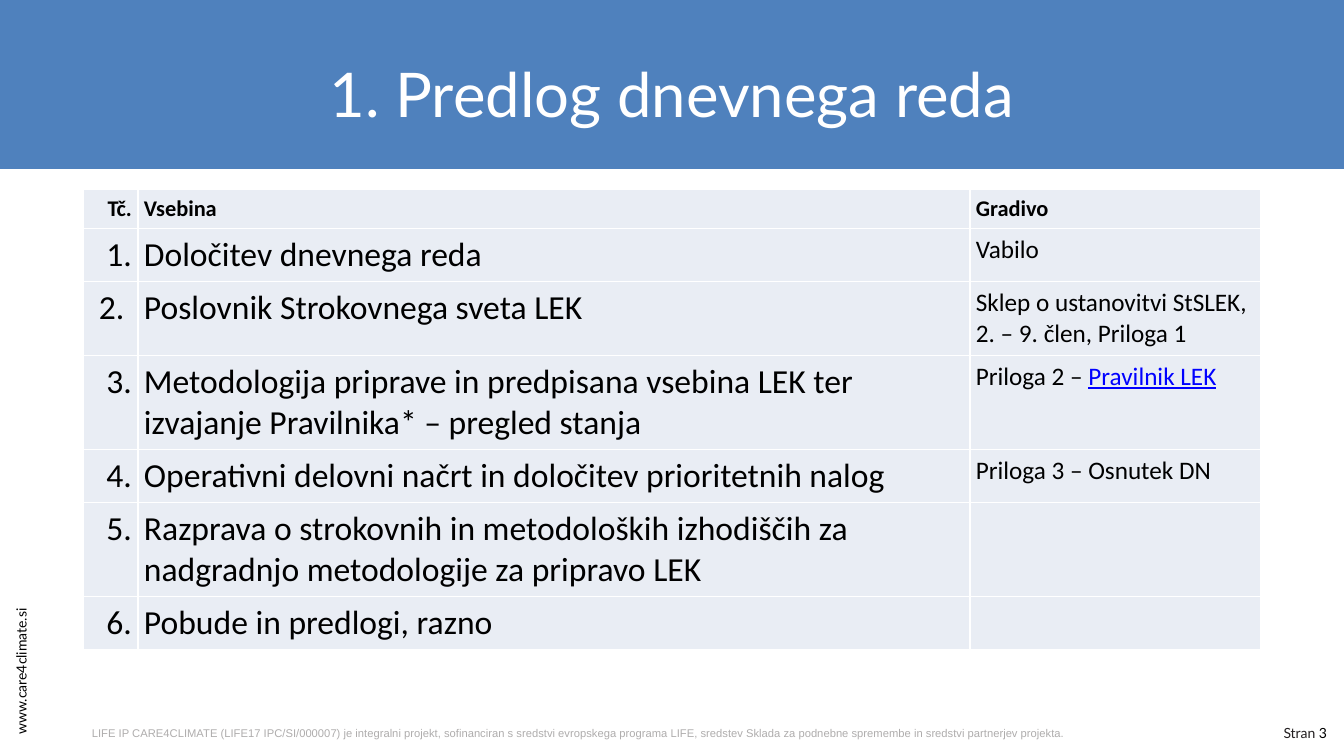
from lxml.etree import SubElement
from pptx import Presentation
from pptx.dml.color import RGBColor
from pptx.enum.shapes import MSO_SHAPE
from pptx.enum.text import MSO_ANCHOR, PP_ALIGN
from pptx.oxml.ns import qn
from pptx.util import Emu, Pt

SCALE = 914400 / 100.8  # EMU in one px


def px(n):
    return Emu(round(n * SCALE))


def color(code):
    return RGBColor.from_string(code)


def write(frame, text, font="Lato", size=10, ink="000000", bold=False,
          align=PP_ALIGN.LEFT):
    """Fill a frame with text, or with a list of (text, ink, underline) runs."""
    para = frame.paragraphs[0]
    para.alignment = align
    runs = [(text, ink, False)] if isinstance(text, str) else text
    for words, tint, under in runs:
        run = para.add_run()
        run.text = words
        run.font.name = font
        run.font.size = Pt(size)
        run.font.bold = bold
        run.font.underline = under
        run.font.color.rgb = color(tint)


class Deck:
    blue, pale, white, black = "4F81BD", "E9EDF4", "FFFFFF", "000000"

    def __init__(self):
        self.prs = Presentation()
        self.prs.slide_width, self.prs.slide_height = px(1344), px(756)
        self.slide = self.prs.slides.add_slide(self.prs.slide_layouts[5])
        self.shapes = self.slide.shapes

    def label(self, text, box, turn=0, anchor=MSO_ANCHOR.MIDDLE, **form):
        shape = self.shapes.add_textbox(*map(px, box))
        shape.rotation = turn
        frame = shape.text_frame
        frame.word_wrap = True
        frame.vertical_anchor = anchor
        write(frame, text, **form)

    def band(self, box):
        shape = self.shapes.add_shape(MSO_SHAPE.RECTANGLE, *map(px, box))
        shape.shadow.inherit = False
        shape.fill.solid()
        shape.fill.fore_color.rgb = color(self.blue)
        shape.line.fill.background()

    def title(self, text, box):
        shape = self.shapes.title
        shape.left, shape.top, shape.width, shape.height = map(px, box)
        shape.text_frame.vertical_anchor = MSO_ANCHOR.MIDDLE
        write(shape.text_frame, text, size=44, ink=self.white,
              align=PP_ALIGN.CENTER)
        # Bring the title in front of the band
        self.shapes._spTree.append(shape._element)

    def cell(self, cell, text, **form):
        cell.margin_left = cell.margin_right = px(6)
        cell.margin_top = cell.margin_bottom = px(6)
        # Borders come before the fill in the cell's XML
        props = cell._tc.get_or_add_tcPr()
        for side in ("lnL", "lnR", "lnT", "lnB"):
            line = SubElement(props, qn("a:" + side), w=str(Pt(1)))
            fill = SubElement(line, qn("a:solidFill"))
            SubElement(fill, qn("a:srgbClr"), val=self.white)
        cell.fill.solid()
        cell.fill.fore_color.rgb = color(self.pale)
        if text:
            write(cell.text_frame, text, font="Calibri", **form)

    def table(self, rows, spot, wide, high):
        box = (*spot, sum(wide), sum(high))
        table = self.shapes.add_table(len(rows), len(wide),
                                      *map(px, box)).table
        table.first_row = table.horz_banding = False
        for col, size in zip(table.columns, wide):
            col.width = px(size)
        for row, size in zip(table.rows, high):
            row.height = px(size)
        sides = (PP_ALIGN.RIGHT, PP_ALIGN.LEFT, PP_ALIGN.LEFT)
        for r, row in enumerate(rows):
            for c, text in enumerate(row):
                size = (24, 24, 18)[c] if r else 16
                self.cell(table.cell(r, c), text, size=size, bold=r == 0,
                          align=sides[c])


def main():
    deck = Deck()

    # Margin notes
    deck.label("www.care4climate.si", (-71, 639, 184, 27), turn=270)
    deck.label([("Stran ", "231F20", False), ("3", deck.black, False)],
               (1226, 719, 111, 27), align=PP_ALIGN.RIGHT)
    deck.label("LIFE IP CARE4CLIMATE (LIFE17 IPC/SI/000007) je integralni "
               "projekt, sofinanciran s sredstvi evropskega programa LIFE, "
               "sredstev Sklada za podnebne spremembe in sredstvi partnerjev "
               "projekta.", (82, 721, 1165, 24), anchor=MSO_ANCHOR.TOP,
               font="Arial", size=8, ink="AFADAD")

    # Heading
    deck.band((0, 0, 1344, 169))
    deck.title("1. Predlog dnevnega reda", (67, 30, 1210, 126))

    # Agenda
    rule = [("Priloga 2 – ", deck.black, False),
            ("Pravilnik LEK", "0000FF", True)]
    rows = [
        ("Tč.", "Vsebina", "Gradivo"),
        ("1.", "Določitev dnevnega reda", "Vabilo"),
        ("2. ", "Poslovnik Strokovnega sveta LEK",
         "Sklep o ustanovitvi StSLEK, 2. – 9. člen, Priloga 1"),
        ("3.", "Metodologija priprave in predpisana vsebina LEK ter "
         "izvajanje Pravilnika* – pregled stanja", rule),
        ("4.", "Operativni delovni načrt in določitev prioritetnih nalog",
         "Priloga 3 – Osnutek DN"),
        ("5.", "Razprava o strokovnih in metodoloških izhodiščih za "
         "nadgradnjo metodologije za pripravo LEK", ""),
        ("6.", "Pobude in predlogi, razno", ""),
    ]
    deck.table(rows, (83, 189), (55, 832, 291), (39, 53, 74, 93, 53, 94, 52))

    deck.prs.save("out.pptx")


if __name__ == "__main__":
    main()
